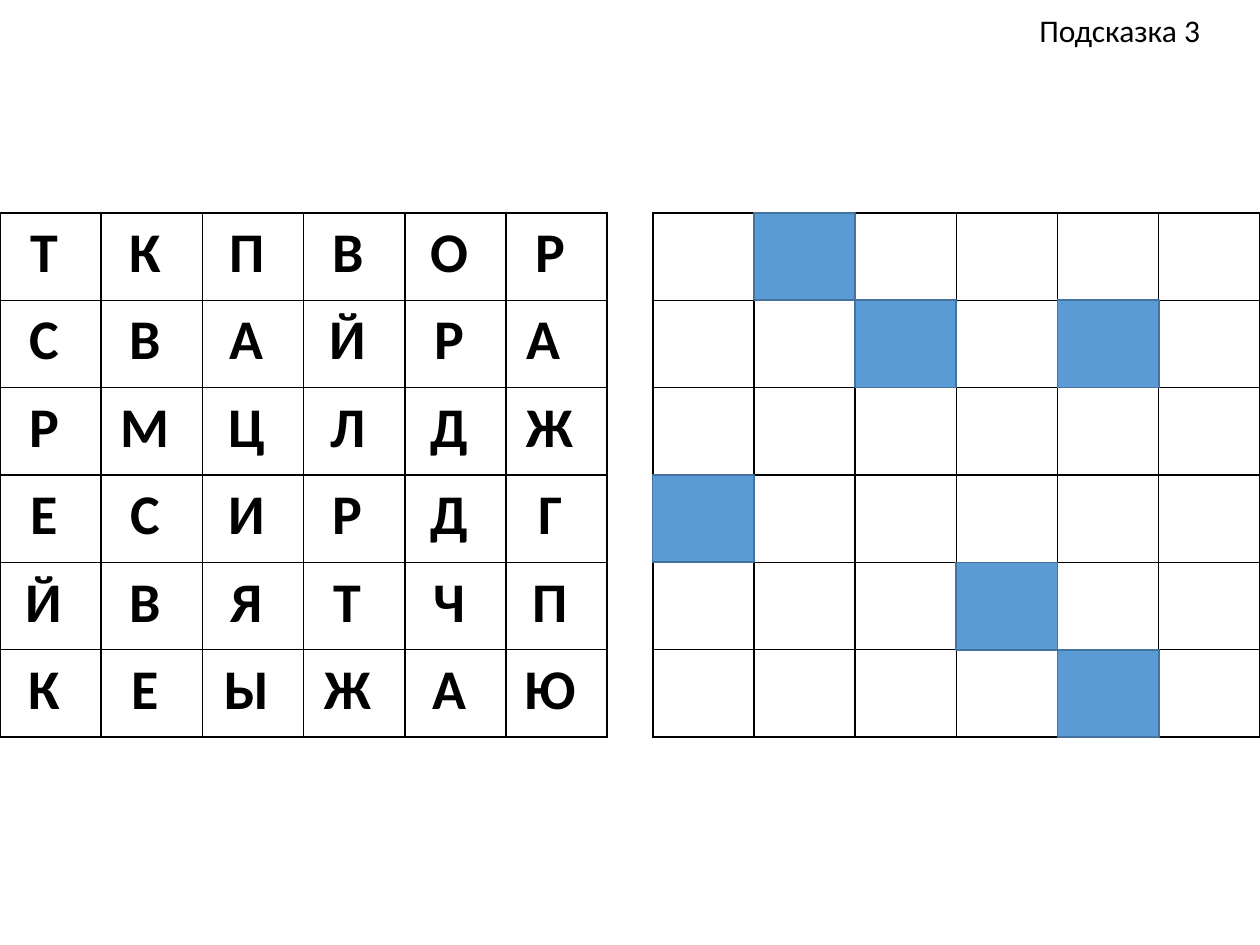
import pptx
import pptx.dml.color
import pptx.enum.shapes
import pptx.enum.text
import pptx.oxml
import pptx.oxml.ns
import pptx.util

RGBColor = pptx.dml.color.RGBColor
BLACK = RGBColor(0, 0, 0)
WHITE = RGBColor(255, 255, 255)
BLUE = RGBColor(0x5B, 0x9B, 0xD5)
NAVY = RGBColor(0x43, 0x73, 0x9E)

WIDE, HIGH = 10, 7.5
SIDE = 6
SPAN, TALL = 4.82, 4.16
COL, ROW = SPAN / SIDE, TALL / SIDE
LEFT, RIGHT, TOP = 0, WIDE - SPAN, 1.69
ROWS = ["ТКПВОР", "СВАЙРА", "РМЦЛДЖ", "ЕСИРДГ", "ЙВЯТЧП", "КЕЫЖАЮ"]
HOLES = [(0, 1), (1, 2), (1, 4), (3, 0), (4, 3), (5, 4)]


def inch(*sizes):
    return [pptx.util.Inches(size) for size in sizes]


def style(para, size, bold=False):
    for run in para.runs:
        run.font.name = "Calibri"
        run.font.size = pptx.util.Pt(size)
        run.font.bold = bold
        run.font.color.rgb = BLACK


def add_box(slide, x, y, w, h, fill, line):
    kind = pptx.enum.shapes.MSO_SHAPE.RECTANGLE
    box = slide.shapes.add_shape(kind, *inch(x, y, w, h))
    box.shadow.inherit = False
    box.fill.solid()
    box.fill.fore_color.rgb = fill
    box.line.color.rgb = line
    box.line.width = pptx.util.Pt(1)


def edge(cell):
    cell.fill.background()
    props = cell._tc.get_or_add_tcPr()
    for spot, side in enumerate("LRTB"):
        line = pptx.oxml.parse_xml(
            f'<a:ln{side} {pptx.oxml.ns.nsdecls("a")} w="12700"><a:solidFill>'
            f'<a:srgbClr val="{BLACK}"/></a:solidFill></a:ln{side}>')
        props.insert(spot, line)


def add_grid(slide, x, rows=None):
    frame = slide.shapes.add_table(SIDE, SIDE, *inch(x, TOP, SPAN, TALL))
    table = frame.table
    table.first_row = table.horz_banding = False
    for col in table.columns:
        col.width = pptx.util.Inches(COL)
    for row in table.rows:
        row.height = pptx.util.Inches(ROW)
    for spot, cell in enumerate(table.iter_cells()):
        edge(cell)
        if rows:
            r, c = divmod(spot, SIDE)
            para = cell.text_frame.paragraphs[0]
            para.text = rows[r][c] + " "
            para.alignment = pptx.enum.text.PP_ALIGN.CENTER
            style(para, 32, True)
    return table


def add_label(slide, text, x, y, w, h):
    box = slide.shapes.add_textbox(*inch(x, y, w, h))
    box.text_frame.word_wrap = True
    box.text_frame.text = text
    style(box.text_frame.paragraphs[0], 18)


def main():
    deck = pptx.Presentation()
    deck.slide_width, deck.slide_height = inch(WIDE, HIGH)
    slide = deck.slides.add_slide(deck.slide_layouts[6])
    for x in (RIGHT, LEFT):
        add_box(slide, x, TOP, SPAN, TALL, WHITE, BLACK)
    table = add_grid(slide, LEFT, ROWS)
    table.cell(1, 5).margin_right = pptx.util.Inches(0.2)
    add_grid(slide, RIGHT)
    for r, c in HOLES:
        add_box(slide, RIGHT + c * COL, TOP + r * ROW, COL, ROW, BLUE, NAVY)
    add_label(slide, "Подсказка 3", 8.15, 0.04, 1.82, 0.4)
    deck.save("out.pptx")


if __name__ == "__main__":
    main()
